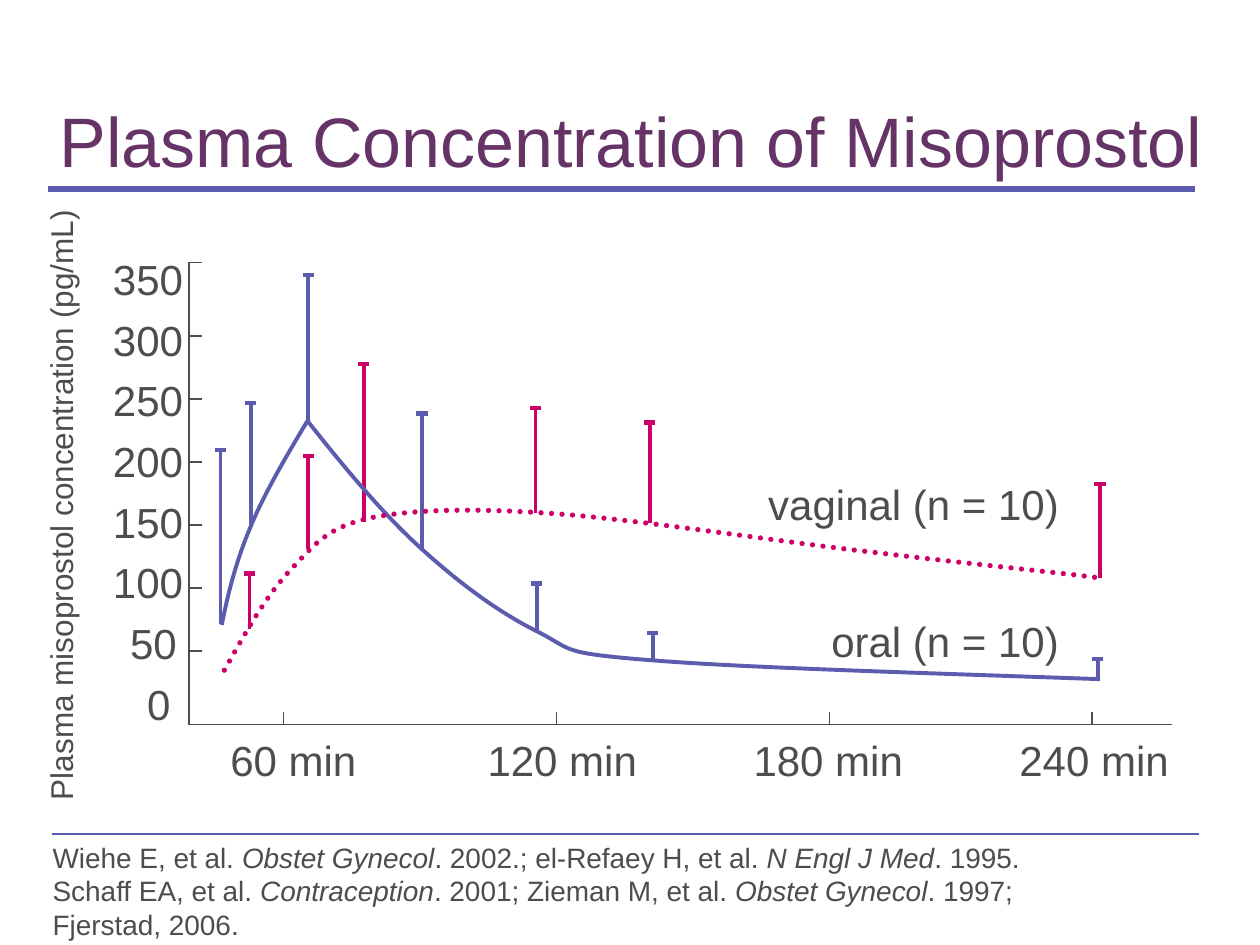
from lxml.etree import SubElement
from pptx import Presentation
from pptx.dml.color import RGBColor
from pptx.enum.dml import MSO_LINE
from pptx.enum.shapes import MSO_CONNECTOR
from pptx.enum.text import MSO_ANCHOR as ANCHOR, PP_ALIGN as ALIGN
from pptx.oxml.ns import qn
from pptx.util import Pt

PURPLE = RGBColor(0x66, 0x33, 0x66)
BLUE = RGBColor(0x5C, 0x5C, 0xAE)
PINK = RGBColor(0xCC, 0x00, 0x66)
GREY = RGBColor(0x4D, 0x4D, 0x4D)
FONT = "Arial"
CAP = 6.5
TICK = 7.2

# Positions below are points from the top left corner of the plot.
X_AXIS = [("60 min", 54, 59.6), ("120 min", 210, 213.3),
          ("180 min", 366, 365.3), ("240 min", 516, 517.2)]  # label, tick, centre
Y_TICKS = [0] + [42 + 36 * i for i in range(6)]

# Error bars: x, top, bottom
ORAL_BARS = [(18, 107, 206.4), (35.3, 80.4, 151), (68.2, 7, 90.5),
             (133.2, 86.4, 164.6), (198.7, 183.4, 210.7),
             (265, 211.6, 226.6), (519.3, 226.6, 237.4)]
VAGINAL_BARS = [(34.6, 177.8, 209.3), (68.2, 110.6, 163.9),
                (99.9, 58.1, 148.1), (198, 83.3, 143),
                (263.3, 91.4, 148.8), (520.6, 126.5, 180.5)]

# Bezier curves: a start point, then three points for each segment
ORAL_RISE = [(67.7, 90.5), (54.7, 112.1), (42.5, 133), (34.6, 152.4),
             (26.6, 171.8), (22.3, 189.1), (18.7, 207.1)]
ORAL_FALL = [(67.7, 90.5), (89.3, 117.8), (111.6, 144.5), (133.2, 163.9),
             (155.5, 184.1), (177.1, 199.9), (198.7, 210.7),
             (220.3, 221.5), (210.2, 223), (264.2, 227.3),
             (317.5, 231.6), (419, 234.5), (520.6, 238.1)]
VAGINAL = [(20.2, 233), (32.4, 211.4), (43.9, 190.6), (58.3, 175.4),
           (72, 161), (78.5, 151.7), (103.7, 145.9),
           (129.6, 140.9), (164.9, 140.2), (212.4, 143.8),
           (259.9, 147.4), (337.7, 159.6), (389.5, 165.4),
           (441.4, 171.8), (501.1, 177.6), (522, 180.5)]

# Runs in odd places are italic
REFERENCES = [
    ["Wiehe E, et al. ", "Obstet Gynecol", ". 2002.; el-Refaey H, et al. ",
     "N Engl J Med", ". 1995."],
    ["Schaff EA, et al. ", "Contraception", ". 2001; Zieman M, et al. ",
     "Obstet Gynecol", ". 1997; Fjerstad, 2006."],
]


def add_line(s, x1, y1, x2, y2, color=GREY, width=0.75):
    ln = s.shapes.add_connector(MSO_CONNECTOR.STRAIGHT,
                                Pt(x1), Pt(y1), Pt(x2), Pt(y2))
    ln.line.color.rgb = color
    ln.line.width = Pt(width)
    SubElement(ln._element.spPr, qn("a:effectLst"))


def add_text(s, x, y, w, h, paragraphs, size, color=GREY, align=ALIGN.LEFT,
             anchor=ANCHOR.TOP, wrap=False, inset=True):
    """Add a text box; each paragraph is a list of runs, every second italic."""
    sp = s.shapes.add_textbox(Pt(x), Pt(y), Pt(w), Pt(h))
    tf = sp.text_frame
    tf.word_wrap = wrap
    tf.vertical_anchor = anchor
    if not inset:
        tf.margin_left = tf.margin_right = tf.margin_top = tf.margin_bottom = 0
    for i, runs in enumerate(paragraphs):
        p = tf.add_paragraph() if i else tf.paragraphs[0]
        p.alignment = align
        p.font.name, p.font.size = FONT, Pt(size)
        p.font.color.rgb = color
        for j, text in enumerate(runs):
            r = p.add_run()
            r.text = text
            if j % 2:
                r.font.italic = True
    return sp


def add_curve(s, x, y, nodes, color, width, dotted=False):
    """Draw a chain of cubic Bezier segments as an open freeform."""
    points = [(Pt(x + px), Pt(y + py)) for px, py in nodes]
    fb = s.shapes.build_freeform(*points[0])
    fb.add_line_segments(points[1:], close=False)
    sp = fb.convert_to_shape()
    outline = next(sp._element.iter(qn("a:path")))
    segments = outline.findall(qn("a:lnTo"))
    for i, segment in enumerate(segments):
        if i % 3 == 0:
            bezier = SubElement(outline, qn("a:cubicBezTo"))
        bezier.append(segment[0])
        outline.remove(segment)
    sp.shadow.inherit = False
    sp.fill.background()
    sp.line.color.rgb = color
    sp.line.width = Pt(width)
    if dotted:
        sp.line.dash_style = MSO_LINE.ROUND_DOT
        sp._element.spPr.find(qn("a:ln")).set("cap", "rnd")


def add_title(s, x, y, w, h):
    sp = add_text(s, x, y, w, h, [["Plasma Concentration of Misoprostol"]], 40,
                  PURPLE, anchor=ANCHOR.BOTTOM, wrap=True)
    sp.text_frame.paragraphs[0].line_spacing = 0.9
    add_line(s, x + 0.3, y + h, x + 656.2, y + h, BLUE, 3)


def add_axes(s, x, y, w, h):
    add_line(s, x, y + h, x + w, y + h)
    add_line(s, x, y, x, y + h)
    for label, tick, centre in X_AXIS:
        add_line(s, x + tick, y + h - TICK, x + tick, y + h)
        add_text(s, x + centre - 43.2, y + h + 5.8, 86.4, 28.8, [[label]], 24,
                 align=ALIGN.CENTER, inset=False)
    for tick in Y_TICKS:
        add_line(s, x, y + tick, x + TICK, y + tick)
    for i, value in enumerate(range(350, -1, -50)):
        label = str(value)
        width = 13.5 * len(label)
        right = x - 3.4 - 3.6 * (3 - len(label))
        add_text(s, right - width, y - 5.2 + 34.68 * i, width, 28.8, [[label]],
                 24, align=ALIGN.RIGHT, inset=False)
    sp = add_text(s, x - 249.1, y + 124.3, 351.4, 28.8,
                  [["Plasma misoprostol concentration (pg/mL)"]], 18,
                  align=ALIGN.CENTER)
    sp.rotation = 270


def add_plot(s, x, y, w, h):
    add_axes(s, x, y, w, h)
    for color, bars in ((BLUE, ORAL_BARS), (PINK, VAGINAL_BARS)):
        for bx, top, bottom in bars:
            add_line(s, x + bx, y + top, x + bx, y + bottom, color, 2.25)
            add_line(s, x + bx - CAP / 2, y + top, x + bx + CAP / 2, y + top,
                     color, 2.5)
    add_curve(s, x, y, ORAL_RISE, BLUE, 2.25)
    add_curve(s, x, y, ORAL_FALL, BLUE, 2.25)
    add_curve(s, x, y, VAGINAL, PINK, 3, dotted=True)
    for label, top, width in (("vaginal (n = 10)", 120, 182.2),
                              ("oral (n = 10)", 198, 146.2)):
        add_text(s, x + 504.2 - width, y + top, width, 36.7, [[label]], 24,
                 align=ALIGN.RIGHT)


def add_references(s, x, y, w, h):
    add_line(s, x + 6.5, y, x + 662.4, y, BLUE)
    add_text(s, x, y, w, h, REFERENCES, 16, wrap=True)


def main():
    prs = Presentation()
    prs.slide_width, prs.slide_height = Pt(720), Pt(540)
    s = prs.slides.add_slide(prs.slide_layouts[6])
    add_title(s, 26.9, 18, 676.1, 90)
    add_plot(s, 108, 150, 561.6, 264)
    add_references(s, 23, 476.6, 601.2, 65.5)
    prs.save("out.pptx")


if __name__ == "__main__":
    main()
